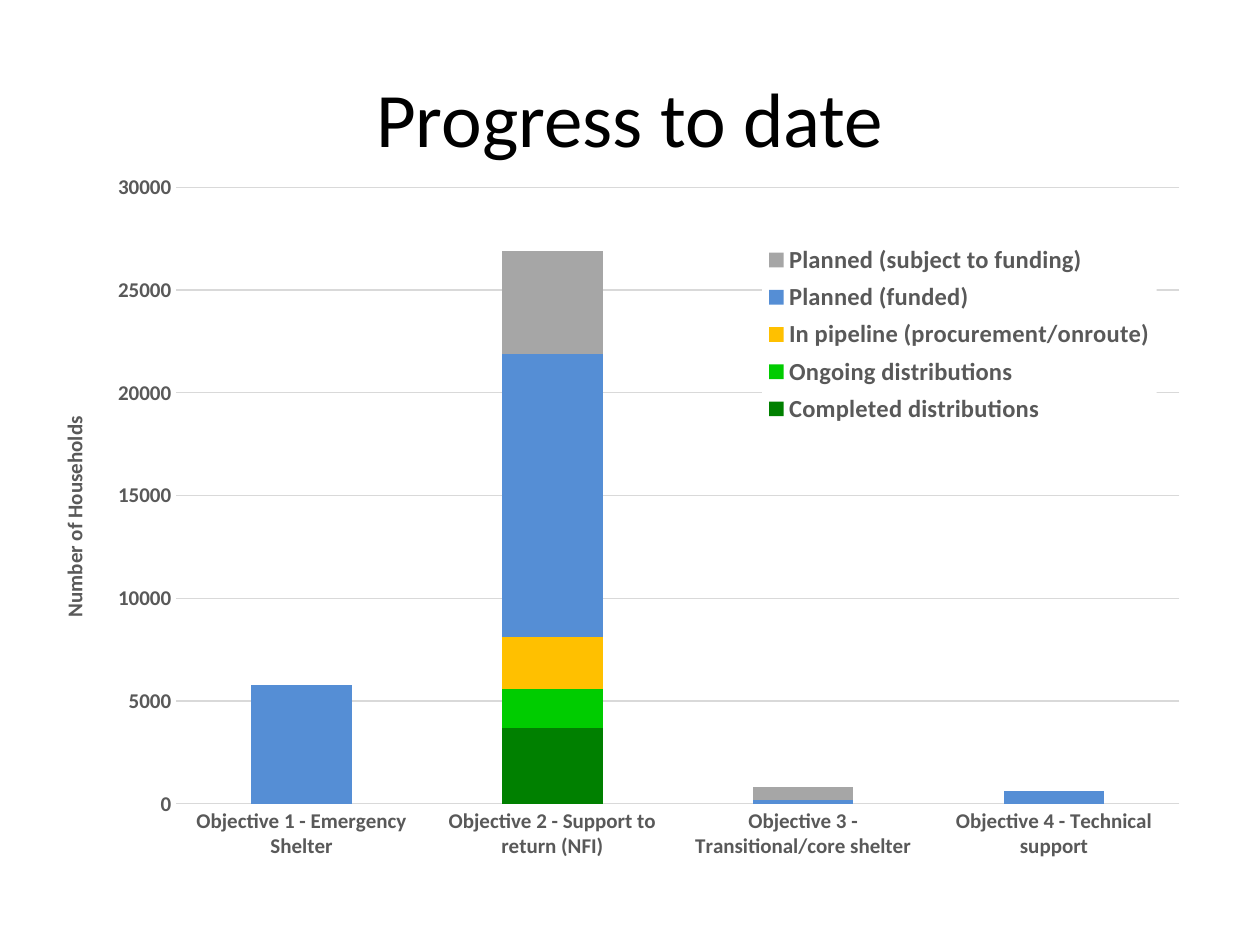
from lxml import etree
from pptx import Presentation
from pptx.chart.data import CategoryChartData
from pptx.dml.color import RGBColor
from pptx.enum.chart import XL_CHART_TYPE, XL_LEGEND_POSITION, XL_TICK_MARK
from pptx.enum.text import MSO_ANCHOR, PP_ALIGN
from pptx.oxml import parse_xml
from pptx.oxml.ns import nsdecls, qn
from pptx.util import Pt

FONT = "Calibri"
COLORS = {
    "title": "000000",
    "label": "595959",
    "grid": "D9D9D9",
    "legend": "FFFFFF",
    "completed": "008000",
    "ongoing": "00CC00",
    "pipeline": "FFC000",
    "funded": "558ED5",
    "unfunded": "A6A6A6",
}
OBJECTIVES = [
    "Objective 1 - Emergency Shelter",
    "Objective 2 - Support to return (NFI)",
    "Objective 3 - Transitional/core shelter",
    "Objective 4 - Technical support",
]
# Name, colour key, households per objective
STAGES = [
    ("Completed distributions", "completed", (0, 3700, None, None)),
    ("Ongoing distributions", "ongoing", (None, 1900, None, None)),
    ("In pipeline (procurement/onroute)", "pipeline", (None, 2500, None, None)),
    ("Planned (funded)", "funded", (5800, 13800, 200, 600)),
    ("Planned (subject to funding)", "unfunded", (None, 5000, 600, None)),
]


def color(key):
    return RGBColor.from_string(COLORS[key])


def style_font(font, size, key, bold):
    font.name = FONT
    font.size = Pt(size)
    font.bold = bold
    font.color.rgb = color(key)


def style_line(line, key):
    line.color.rgb = color(key)
    line.width = Pt(0.75)


def manual_layout(x, y, width, height, inner=False):
    """Return a layout element with its lengths as fractions of the chart."""
    layout = etree.Element(qn("c:layout"))
    manual = etree.SubElement(layout, qn("c:manualLayout"))
    settings = [("xMode", "edge"), ("yMode", "edge"),
                ("x", x), ("y", y), ("w", width), ("h", height)]
    if inner:
        settings.insert(0, ("layoutTarget", "inner"))
    for tag, value in settings:
        etree.SubElement(manual, qn(f"c:{tag}")).set("val", str(value))
    return layout


def add_title(page, text):
    box = page.shapes.add_textbox(Pt(36), Pt(21.6), Pt(648), Pt(90))
    frame = box.text_frame
    frame.word_wrap = True
    frame.vertical_anchor = MSO_ANCHOR.MIDDLE
    para = frame.paragraphs[0]
    para.text = text
    para.alignment = PP_ALIGN.CENTER
    style_font(para.font, 44, "title", False)


def style_axis(axis):
    axis.major_tick_mark = XL_TICK_MARK.NONE
    axis.minor_tick_mark = XL_TICK_MARK.NONE
    style_font(axis.tick_labels.font, 12, "label", True)


def style_value_axis(axis, title):
    style_axis(axis)
    axis.minimum_scale = 0
    axis.maximum_scale = 30000
    axis.major_unit = 5000
    axis.format.line.fill.background()
    style_line(axis.major_gridlines.format.line, "grid")
    frame = axis.axis_title.text_frame
    para = frame.paragraphs[0]
    para.text = title
    style_font(para.font, 12, "label", True)
    body = axis.axis_title._element.find(".//" + qn("a:bodyPr"))
    body.set("rot", "-5400000")
    body.set("vert", "horz")


def add_legend(chart):
    chart.has_legend = True
    legend = chart.legend
    legend.position = XL_LEGEND_POSITION.RIGHT
    legend.include_in_layout = False
    style_font(legend.font, 14, "label", True)
    # Place the legend over the plot on a plain background
    element = legend._element
    for old in element.findall(qn("c:layout")):
        element.remove(old)
    overlay = element.find(qn("c:overlay"))
    overlay.addprevious(manual_layout(0.61, 0.15, 0.33, 0.24))
    overlay.addnext(parse_xml(
        f'<c:spPr {nsdecls("c", "a")}><a:solidFill>'
        f'<a:srgbClr val="{COLORS["legend"]}"/></a:solidFill></c:spPr>'))


def add_progress_chart(page):
    data = CategoryChartData()
    data.categories = OBJECTIVES
    for name, _, households in STAGES:
        data.add_series(name, households)
    chart = page.shapes.add_chart(
        XL_CHART_TYPE.COLUMN_STACKED,
        Pt(18.7), Pt(67), Pt(683.3), Pt(460), data).chart
    chart.has_title = False
    style_font(chart.font, 12, "title", True)

    # Columns
    plot = chart.plots[0]
    plot.gap_width = 150
    plot.overlap = 100
    plot.vary_by_categories = False
    for series, (_, key, _) in zip(plot.series, STAGES):
        series.format.fill.solid()
        series.format.fill.fore_color.rgb = color(key)

    # Axes
    style_axis(chart.category_axis)
    style_line(chart.category_axis.format.line, "grid")
    style_value_axis(chart.value_axis, "Number of Households")

    # Plot area and legend
    area = chart._chartSpace.find(".//" + qn("c:plotArea"))
    for old in area.findall(qn("c:layout")):
        area.remove(old)
    area.insert(0, manual_layout(0.12, 0.087, 0.839, 0.766, inner=True))
    add_legend(chart)


def main():
    deck = Presentation()
    deck.slide_width = Pt(720)
    deck.slide_height = Pt(540)
    page = deck.slides.add_slide(deck.slide_layouts[6])
    add_title(page, "Progress to date")
    add_progress_chart(page)
    deck.save("out.pptx")


if __name__ == "__main__":
    main()
